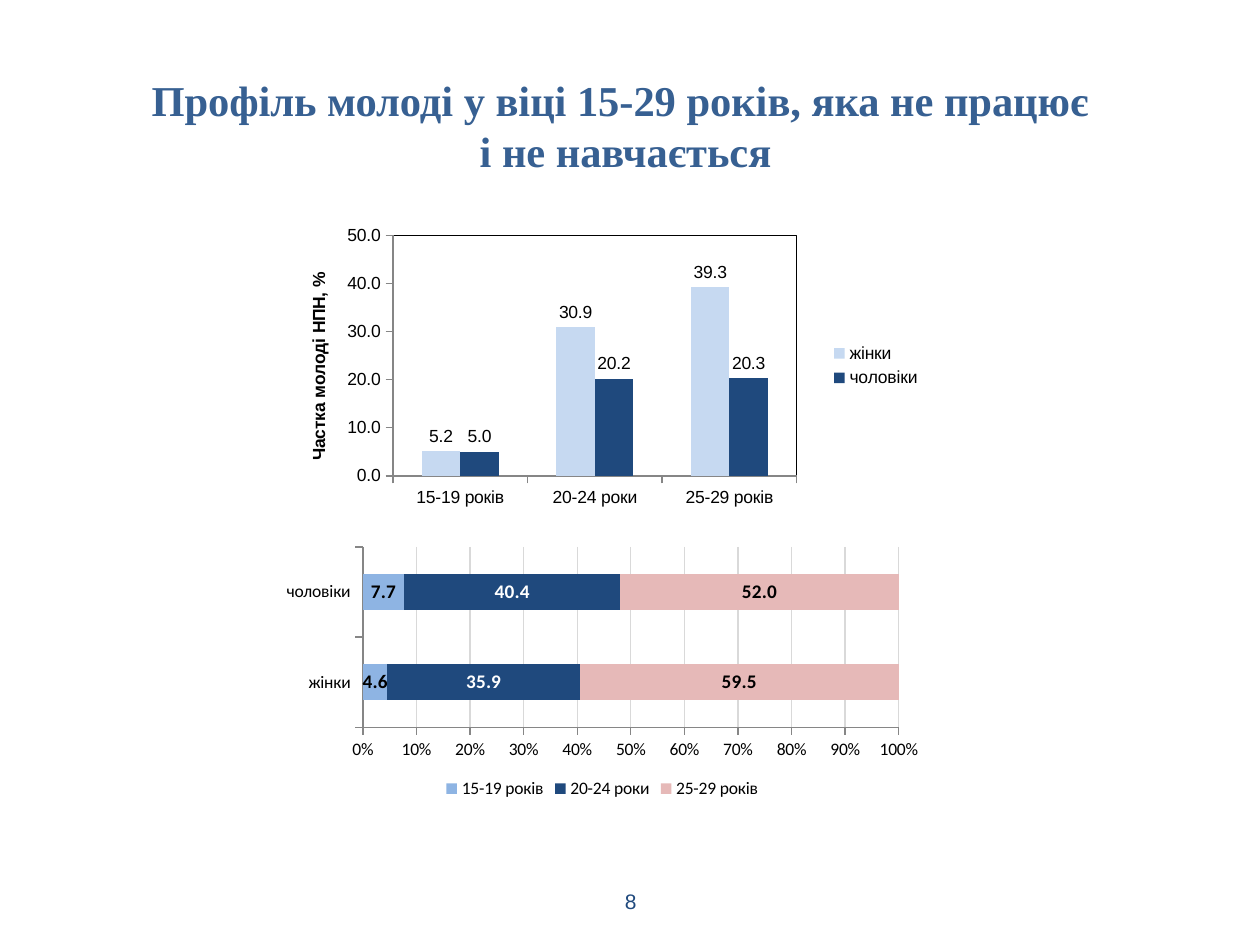
import pptx
import pptx.chart.data
import pptx.dml.color
import pptx.enum.chart
import pptx.enum.text
import pptx.oxml
import pptx.oxml.ns
import pptx.util
from pptx.util import Cm, Pt

chart_enum = pptx.enum.chart
NAVY = "1F497D"


def color(hex_string):
    return pptx.dml.color.RGBColor.from_string(hex_string)


def add_bar_chart(slide, kind, box, font_name, categories, series_list, legend_position):
    """Add a bar chart with the common styling; series are (name, values, fill)."""
    data = pptx.chart.data.CategoryChartData(number_format="0.0")
    data.categories = categories
    for name, values, _ in series_list:
        data.add_series(name, values)
    chart = slide.shapes.add_chart(kind, *box, data).chart
    chart.has_title = False
    chart.font.name = font_name
    chart.font.size = Pt(10)
    chart.font.color.rgb = color("000000")
    chart.has_legend = True
    chart.legend.position = legend_position
    chart.legend.include_in_layout = False
    plot = chart.plots[0]
    plot.vary_by_categories = False
    plot.gap_width = 150
    for series, (_, _, fill) in zip(plot.series, series_list):
        series.invert_if_negative = False
        series.format.fill.solid()
        series.format.fill.fore_color.rgb = color(fill)
    for axis in (chart.category_axis, chart.value_axis):
        axis.has_major_gridlines = False
        axis.major_tick_mark = chart_enum.XL_TICK_MARK.OUTSIDE
        axis.minor_tick_mark = chart_enum.XL_TICK_MARK.NONE
        axis.format.line.color.rgb = color("868686")
        axis.format.line.width = Pt(0.75)
    return chart


presentation = pptx.Presentation()
presentation.slide_width = Cm(25.4)
presentation.slide_height = Cm(19.05)
slide = presentation.slides.add_slide(presentation.slide_layouts[5])

# Title
title = slide.shapes.title
title.left, title.top, title.width, title.height = Cm(0.71), Cm(1.32), Cm(23.8), Cm(2.39)
title.text_frame.vertical_anchor = pptx.enum.text.MSO_ANCHOR.MIDDLE
paragraph = title.text_frame.paragraphs[0]
paragraph.alignment = pptx.enum.text.PP_ALIGN.CENTER
title_lines = ["Профіль молоді у віці 15-29 років, яка не працює ", "і не навчається"]
for index, line in enumerate(title_lines):
    if index:
        paragraph.add_line_break()
    run = paragraph.add_run()
    run.text = line
    run.font.name = "Times New Roman"
    run.font.size = Pt(24.3)
    run.font.bold = True
    run.font.color.rgb = color("376092")

# Share of youth by age group and sex
age_groups = ["15-19 рокiв", "20-24 роки", "25-29 років"]
share_chart = add_bar_chart(
    slide, chart_enum.XL_CHART_TYPE.COLUMN_CLUSTERED,
    (Cm(5.69), Cm(4.52), Cm(13.13), Cm(5.72)), "Arial", age_groups,
    [("жінки", (5.2, 30.9, 39.3), "C6D9F1"), ("чоловіки", (5.0, 20.2, 20.3), NAVY)],
    chart_enum.XL_LEGEND_POSITION.RIGHT)
share_chart.plots[0].overlap = 0
share_chart.plots[0].has_data_labels = True
labels = share_chart.plots[0].data_labels
labels.show_value = True
labels.number_format = "0.0"
labels.number_format_is_linked = False
labels.position = chart_enum.XL_LABEL_POSITION.OUTSIDE_END

value_axis = share_chart.value_axis
value_axis.minimum_scale, value_axis.maximum_scale, value_axis.major_unit = 0, 50, 10
value_axis.tick_labels.number_format = "0.0"
value_axis.tick_labels.number_format_is_linked = False
run = value_axis.axis_title.text_frame.paragraphs[0].add_run()
run.text = "Частка молоді НПН, %"
run.font.name = "Arial"
run.font.size = Pt(10)
run.font.bold = True
run.font.color.rgb = color("000000")

# Fixed plot area with a black frame
namespaces = pptx.oxml.ns.nsdecls("c", "a")
plot_area = share_chart.element.chart.plotArea
for old_layout in plot_area.findall(pptx.oxml.ns.qn("c:layout")):
    plot_area.remove(old_layout)
position = "".join(
    f'<c:{tag} val="{value}"/>' for tag, value in [
        ("layoutTarget", "inner"), ("xMode", "edge"), ("yMode", "edge"),
        ("x", 0.17), ("y", 0.04), ("w", 0.62), ("h", 0.85)])
plot_area.insert(0, pptx.oxml.parse_xml(
    f"<c:layout {namespaces}><c:manualLayout>{position}</c:manualLayout></c:layout>"))
plot_area.append(pptx.oxml.parse_xml(
    f'<c:spPr {namespaces}><a:noFill/><a:ln w="9525"><a:solidFill>'
    '<a:srgbClr val="000000"/></a:solidFill></a:ln></c:spPr>'))

# Age structure by sex
age_values = [(4.6, 7.7), (35.9, 40.4), (59.5, 52.0)]
structure_chart = add_bar_chart(
    slide, chart_enum.XL_CHART_TYPE.BAR_STACKED_100,
    (Cm(5.51), Cm(10.92), Cm(13.26), Cm(5.28)), "Calibri", ["жінки", "чоловіки"],
    list(zip(age_groups, age_values, ["8EB4E3", NAVY, "E6B9B8"])),
    chart_enum.XL_LEGEND_POSITION.BOTTOM)
structure_chart.plots[0].overlap = 100
for series, label_color in zip(structure_chart.plots[0].series, ["000000", "FFFFFF", "000000"]):
    labels = series.data_labels
    labels.show_value = True
    labels.number_format = "#,##0.0"
    labels.number_format_is_linked = False
    labels.position = chart_enum.XL_LABEL_POSITION.CENTER
    labels.font.size = Pt(11)
    labels.font.bold = True
    labels.font.color.rgb = color(label_color)
value_axis = structure_chart.value_axis
value_axis.major_unit = 0.1
value_axis.tick_labels.number_format = "0%"
value_axis.tick_labels.number_format_is_linked = False
value_axis.has_major_gridlines = True
value_axis.major_gridlines.format.line.color.rgb = color("D9D9D9")
value_axis.major_gridlines.format.line.width = Pt(0.75)

# Page number
page_number = slide.shapes.add_textbox(Cm(8.69), Cm(17.65), Cm(8.05), Cm(1.02))
page_number.text_frame.word_wrap = True
page_number.text_frame.vertical_anchor = pptx.enum.text.MSO_ANCHOR.MIDDLE
paragraph = page_number.text_frame.paragraphs[0]
paragraph.alignment = pptx.enum.text.PP_ALIGN.CENTER
run = paragraph.add_run()
run.text = "8"
run.font.name = "Arial"
run.font.size = Pt(12)
run.font.color.rgb = color(NAVY)

presentation.save("out.pptx")
